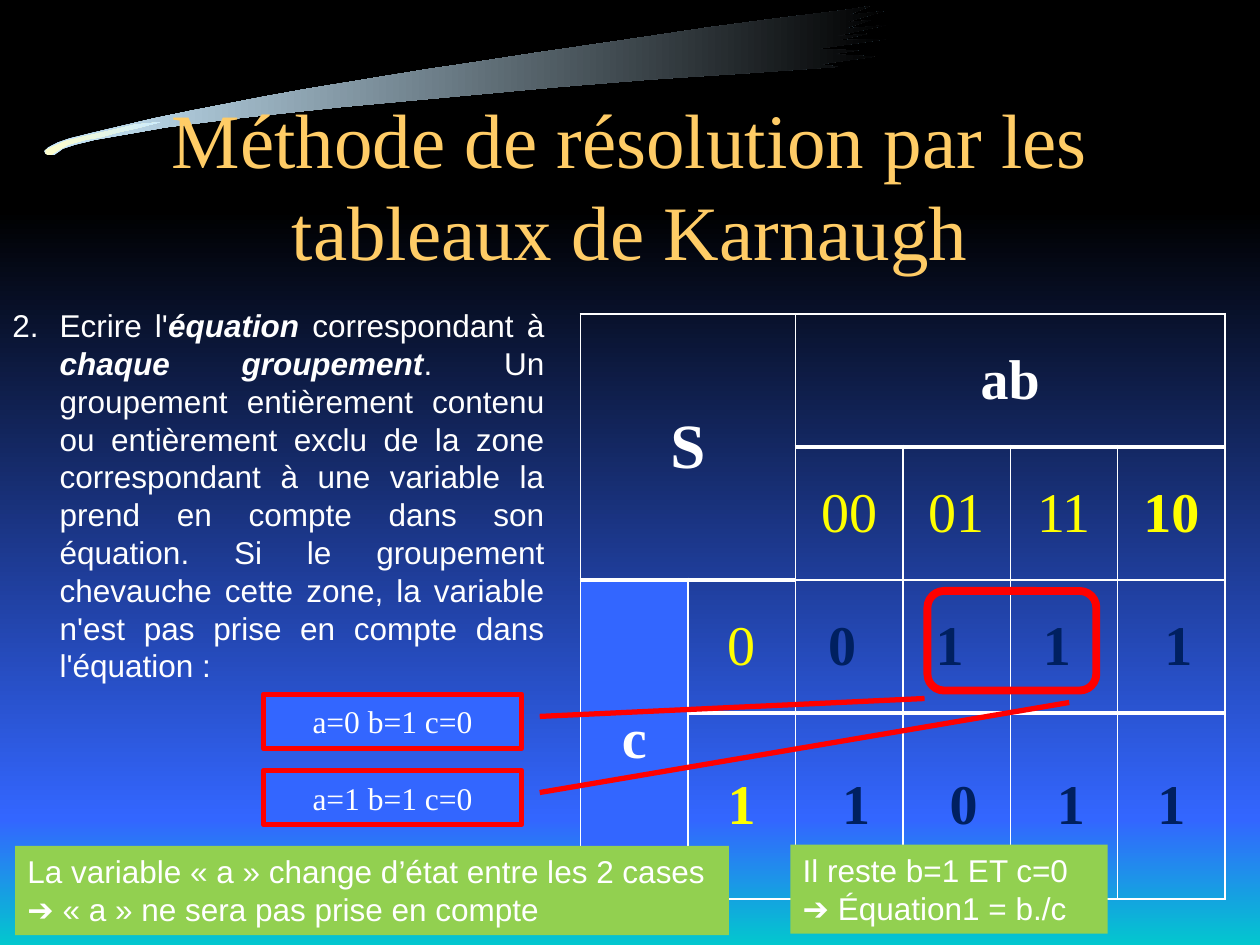
from lxml import etree
from pptx import Presentation
from pptx.dml.color import RGBColor
from pptx.enum.shapes import MSO_SHAPE
from pptx.enum.text import MSO_ANCHOR, MSO_AUTO_SIZE, PP_ALIGN
from pptx.oxml.ns import qn
from pptx.util import Pt

RECT, ROUNDED = MSO_SHAPE.RECTANGLE, MSO_SHAPE.ROUNDED_RECTANGLE
CALLOUT = MSO_SHAPE.LINE_CALLOUT_1
LEFT, CENTER, JUSTIFY = PP_ALIGN.LEFT, PP_ALIGN.CENTER, PP_ALIGN.JUSTIFY
MIDDLE, TOP = MSO_ANCHOR.MIDDLE, MSO_ANCHOR.TOP
SERIF, SANS = "Times New Roman", "Arial"
COLORS = {
    "black": "000000", "blue": "3366FF", "teal": "00CCCC", "ice": "CCECFF",
    "cream": "FFFFCC", "gold": "FFCC66", "white": "FFFFFF", "yellow": "FFFF00",
    "navy": "002060", "red": "FF0000", "green": "92D050",
}


def rgb(name):
    return RGBColor.from_string(COLORS[name])


def style(tf, align, size, font, color, bold=None):
    for p in tf.paragraphs:
        p.alignment = align
        for r in p.runs:
            r.font.size, r.font.name, r.font.bold = Pt(size), font, bold
            r.font.color.rgb = rgb(color)


prs = Presentation()
prs.slide_width, prs.slide_height = Pt(720), Pt(540)
slide = prs.slides.add_slide(prs.slide_layouts[5])
shapes = slide.shapes
slide.background.fill.solid()
slide.background.fill.fore_color.rgb = rgb("black")

# Backdrop: two gradient bands and a brush stroke (outlines in 1/100 inch)
brush = [
    (665, 53), (650, 51), (694, 45), (660, 43), (681, 40), (647, 39), (703, 31),
    (664, 32), (688, 27), (661, 29), (703, 20), (669, 23), (691, 16), (670, 18),
    (701, 9), (673, 12), (690, 5), (671, 8), (614, 15), (561, 22), (494, 32),
    (425, 42), (373, 50), (339, 55), (296, 62), (241, 71), (208, 77), (151, 88),
    (122, 94), (71, 106), (55, 110), (46, 113), (38, 117), (35, 120), (36, 122),
    (38, 123), (43, 123), (50, 118), (59, 115), (75, 111), (98, 107), (132, 101),
    (187, 94), (270, 85), (335, 79), (443, 69), (517, 63), (594, 58),
]
highlight = [
    (36, 119), (45, 115), (52, 112), (64, 109), (86, 104), (107, 99), (127, 97),
    (108, 102), (94, 105), (80, 109), (68, 111), (54, 115), (47, 119), (41, 123),
    (38, 123), (36, 122),
]
backdrop = []
for y, h, start, end in [(120, 348, "black", "blue"), (468, 76, "blue", "teal")]:
    sp = shapes.add_shape(RECT, Pt(-0.7), Pt(y), Pt(725), Pt(h))
    backdrop.append((sp, start, end, 270))
for points, start, end in [(brush, "ice", "black"), (highlight, "cream", "ice")]:
    builder = shapes.build_freeform(*points[0], scale=Pt(0.72))
    builder.add_line_segments(points[1:], close=True)
    backdrop.append((builder.convert_to_shape(), start, end, 0))
for sp, start, end, angle in backdrop:
    sp.shadow.inherit = False
    sp.line.fill.background()
    sp.fill.gradient()
    sp.fill.gradient_angle = angle
    for stop, color in zip(sp.fill.gradient_stops, (start, end)):
        stop.color.rgb = rgb(color)

# Title, brought in front of the backdrop
title = shapes.title
title.left, title.top, title.width, title.height = Pt(54), Pt(60), Pt(612), Pt(90)
tf = title.text_frame
tf.text = "Méthode de résolution par les tableaux de Karnaugh"
tf.word_wrap, tf.auto_size, tf.vertical_anchor = True, MSO_AUTO_SIZE.NONE, MIDDLE
style(tf, CENTER, 44, SERIF, "gold")
shapes._spTree.append(title._element)

# Karnaugh map
rows = [
    ["S", "", "ab", "", "", ""],
    ["", "", "00", "01", "11", "10"],
    ["c", "0", "0 ", "1 ", "1 ", " 1"],
    ["", "1", " 1", " 0", " 1", "1"],
]
light = {(1, 2), (1, 3), (1, 4), (2, 1)}
heavy_below = {0: range(2, 6), 1: range(0, 2), 2: range(1, 6)}
frame = shapes.add_table(4, 6, Pt(331.7), Pt(179.4), Pt(368.4), Pt(334.2))
table = frame.table
table.first_row = table.horz_banding = False
for col in table.columns:
    col.width = Pt(61.4)
for row, height in zip(table.rows, (76, 76, 76, 106.2)):
    row.height = Pt(height)
for i, texts in enumerate(rows):
    for j, text in enumerate(texts):
        cell = table.cell(i, j)
        cell.text = text
        cell.vertical_anchor = MIDDLE
        cell.margin_left = cell.margin_right = Pt(5)
        cell.margin_top = cell.margin_bottom = 0
        if i >= 2 and j >= 2:
            color = "navy"
        elif (i == 1 and j >= 2) or (i >= 2 and j == 1):
            color = "yellow"
        else:
            color = "white"
        size = 36 if text == "S" else 32
        style(cell.text_frame, CENTER, size, SERIF, color, (i, j) not in light)
        heavy = {"lnT": j in heavy_below.get(i - 1, ()), "lnB": j in heavy_below.get(i, ())}
        for side in ("lnL", "lnR", "lnT", "lnB"):
            width = Pt(3 if heavy.get(side) else 1)
            ln = etree.SubElement(cell._tc.get_or_add_tcPr(), qn("a:" + side), w=str(width))
            fill = etree.SubElement(ln, qn("a:solidFill"))
            etree.SubElement(fill, qn("a:srgbClr"), val=COLORS["white"])
        if j == 0 and i >= 2:
            cell.fill.solid()
            cell.fill.fore_color.rgb = rgb("blue")
        else:
            cell.fill.background()
for first, last in [((0, 0), (1, 1)), ((0, 2), (0, 5)), ((2, 0), (3, 0))]:
    table.cell(*first).merge(table.cell(*last))

# Ring around the grouped cells
ring = shapes.add_shape(ROUNDED, Pt(530), Pt(337.7), Pt(96.5), Pt(56.9))
ring.shadow.inherit = False
ring.fill.background()
ring.line.color.rgb, ring.line.width = rgb("red"), Pt(4.5)

# Numbered rule
tf = shapes.add_textbox(0, Pt(171.4), Pt(318.2), Pt(225.4)).text_frame
tf.word_wrap = True
p = tf.paragraphs[0]
pPr = p._p.get_or_add_pPr()
pPr.set("marL", str(Pt(27)))
pPr.set("indent", str(Pt(-27)))
etree.SubElement(pPr, qn("a:buFont"), typeface=SANS)
etree.SubElement(pPr, qn("a:buAutoNum"), type="arabicPeriod", startAt="2")
for text, strong in [
    ("Ecrire l'", False), ("équation", True), (" correspondant à ", False),
    ("chaque groupement", True),
    (". Un groupement entièrement contenu ou entièrement exclu de la zone "
     "correspondant à une variable la prend en compte dans son équation. "
     "Si le groupement chevauche cette zone, la variable n'est pas prise en "
     "compte dans l'équation :", False),
]:
    r = p.add_run()
    r.text = text
    r.font.italic = strong
style(tf, JUSTIFY, 18, SANS, "white")
for r in p.runs:
    r.font.bold = r.font.italic

# Callouts and conclusions
boxes = [
    (CALLOUT, 150.5, 396.7, 147.6, 31, "a=0 b=1 c=0", (0.41, 1.07, 0.08, 2.56)),
    (CALLOUT, 150.5, 440.2, 147.6, 31, "a=1 b=1 c=0", (0.41, 1.07, -1.25, 3.12)),
    (RECT, 8.6, 483.4, 408, 51,
     "La variable « a » change d’état entre les 2 cases\n"
     "➔ « a » ne sera pas prise en compte", ()),
    (RECT, 451.6, 482.6, 181.4, 51, "Il reste b=1 ET c=0\n➔ Équation1 = b./c", ()),
]
for kind, x, y, w, h, text, adjustments in boxes:
    sp = shapes.add_shape(kind, Pt(x), Pt(y), Pt(w), Pt(h))
    sp.shadow.inherit = False
    sp.fill.solid()
    tf = sp.text_frame
    tf.text = text
    tf.word_wrap = True
    if kind == CALLOUT:
        for k, value in enumerate(adjustments):
            sp.adjustments[k] = value
        sp.fill.fore_color.rgb = rgb("blue")
        sp.line.color.rgb, sp.line.width = rgb("red"), Pt(3)
        tf.vertical_anchor = MIDDLE
        style(tf, CENTER, 18, SERIF, "white")
    else:
        sp.fill.fore_color.rgb = rgb("green")
        sp.line.fill.background()
        tf.vertical_anchor = TOP
        style(tf, LEFT, 18, SANS, "white")

prs.save("out.pptx")
